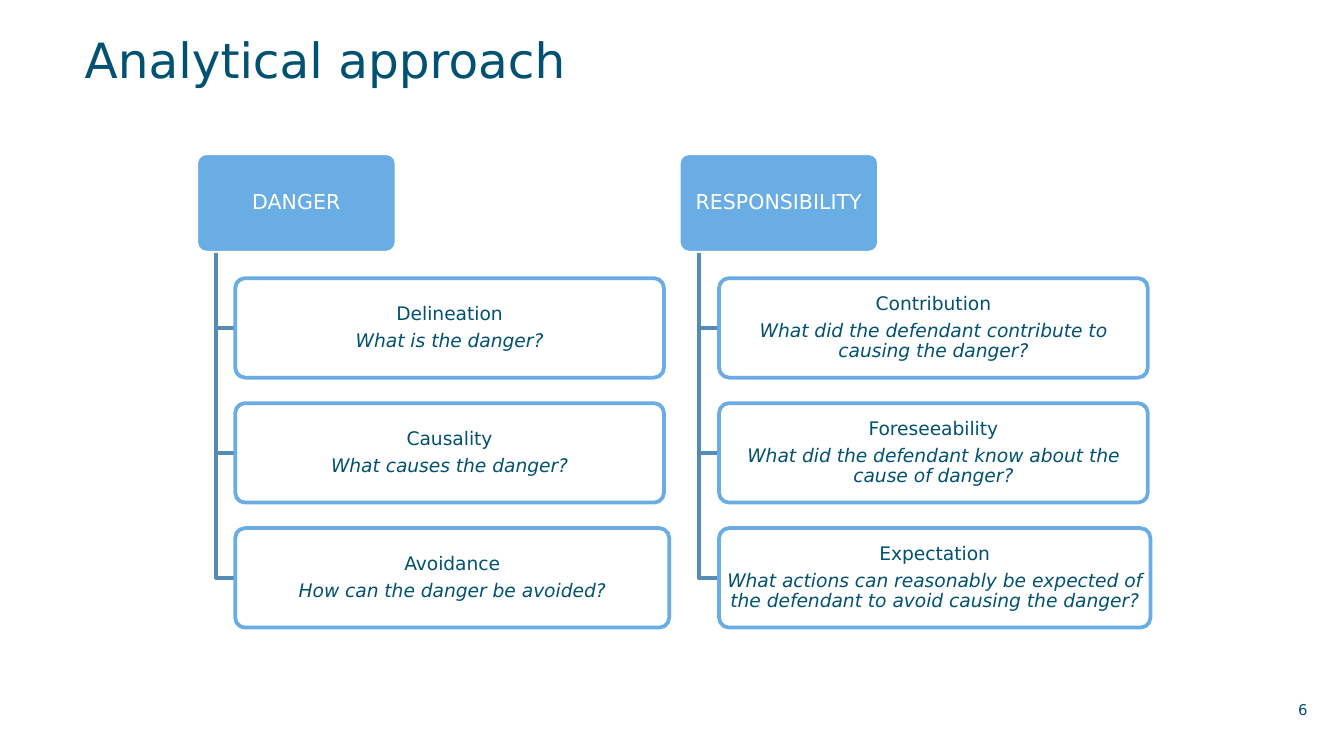
"""Build the analytical approach slide with its two question trees."""
import pptx
import pptx.util
import pptx.dml.color
import pptx.enum.shapes
import pptx.enum.text

Inches = pptx.util.Inches
Pt = pptx.util.Pt
Align = pptx.enum.text.PP_ALIGN
Rgb = pptx.dml.color.RGBColor.from_string
COLORS = {"ink": "005172", "blue": "6AADE4", "steel": "558BB7", "white": "FFFFFF"}

prs = pptx.Presentation()
prs.slide_width = Inches(10)
prs.slide_height = Inches(10) * 9 // 16
slide = prs.slides.add_slide(prs.slide_layouts[6])


def write(shape, lines, size, color, align, pads):
    frame = shape.text_frame
    frame.word_wrap = True
    frame.margin_left, frame.margin_top, frame.margin_right, frame.margin_bottom = map(Inches, pads)
    frame.text = "\n".join(lines)
    for par in frame.paragraphs:
        par.alignment = align
        par.font.name = "DejaVu Sans"
        par.font.size = Pt(size)
        par.font.color.rgb = Rgb(COLORS[color])
    return frame


def add_box(left, top, width, fill, edge, lines, size, color, pad):
    box = slide.shapes.add_shape(
        pptx.enum.shapes.MSO_SHAPE.ROUNDED_RECTANGLE,
        Inches(left), Inches(top), Inches(width), Inches(0.74))
    box.adjustments[0] = 0.1
    box.shadow.inherit = False
    box.fill.solid()
    box.fill.fore_color.rgb = Rgb(COLORS[fill])
    box.line.color.rgb = Rgb(COLORS[edge])
    box.line.width = Pt(2)
    frame = write(box, lines, size, color, Align.CENTER, (0.02, pad, 0.02, pad))
    frame.vertical_anchor = pptx.enum.text.MSO_ANCHOR.MIDDLE
    for par in frame.paragraphs:
        par.line_spacing = 0.9
        par.space_after = Pt(3.5)
    return frame


title = slide.shapes.add_textbox(Inches(0.61), Inches(0.19), Inches(9.11), Inches(0.63))
frame = write(title, ["Analytical approach"], 26, "ink", Align.LEFT, (0.02, 0.02, 0.1, 0.2))
frame.paragraphs[0].line_spacing = Pt(32)

number = slide.shapes.add_textbox(Inches(9.26), Inches(5.22), Inches(0.51), Inches(0.13))
frame = write(number, ["6"], 8, "ink", Align.RIGHT, (0.1, 0, 0.04, 0))
frame.paragraphs[0].line_spacing = Pt(9)

trees = [
    (1.46, 1.75, "DANGER", [
        ("Delineation", "What is the danger?", 3.19),
        ("Causality", "What causes the danger?", 3.19),
        ("Avoidance", "How can the danger be avoided?", 3.23)]),
    (5.05, 5.35, "RESPONSIBILITY", [
        ("Contribution", "What did the defendant contribute to causing the danger?", 3.19),
        ("Foreseeability", "What did the defendant know about the cause of danger?", 3.19),
        ("Expectation", "What actions can reasonably be expected of the defendant "
         "to avoid causing the danger?", 3.21)]),
]

for left, inner, head, items in trees:
    add_box(left, 1.14, 1.49, "blue", "white", [head], 11, "white", 0.02)
    trunk = Inches(left + 0.15)
    for row, (term, query, width) in enumerate(items):
        top = 2.07 + 0.93 * row
        mid = Inches(top + 0.37)
        elbow = slide.shapes.build_freeform(trunk, Inches(1.88))
        elbow.add_line_segments([(trunk, mid), (Inches(inner), mid)], close=False)
        branch = elbow.convert_to_shape()
        branch.shadow.inherit = False
        branch.fill.background()
        branch.line.color.rgb = Rgb(COLORS["steel"])
        branch.line.width = Pt(2)
        frame = add_box(inner, top, width, "white", "blue", [term, query], 10, "ink", 0.01)
        frame.paragraphs[1].font.italic = True

prs.save("out.pptx")
